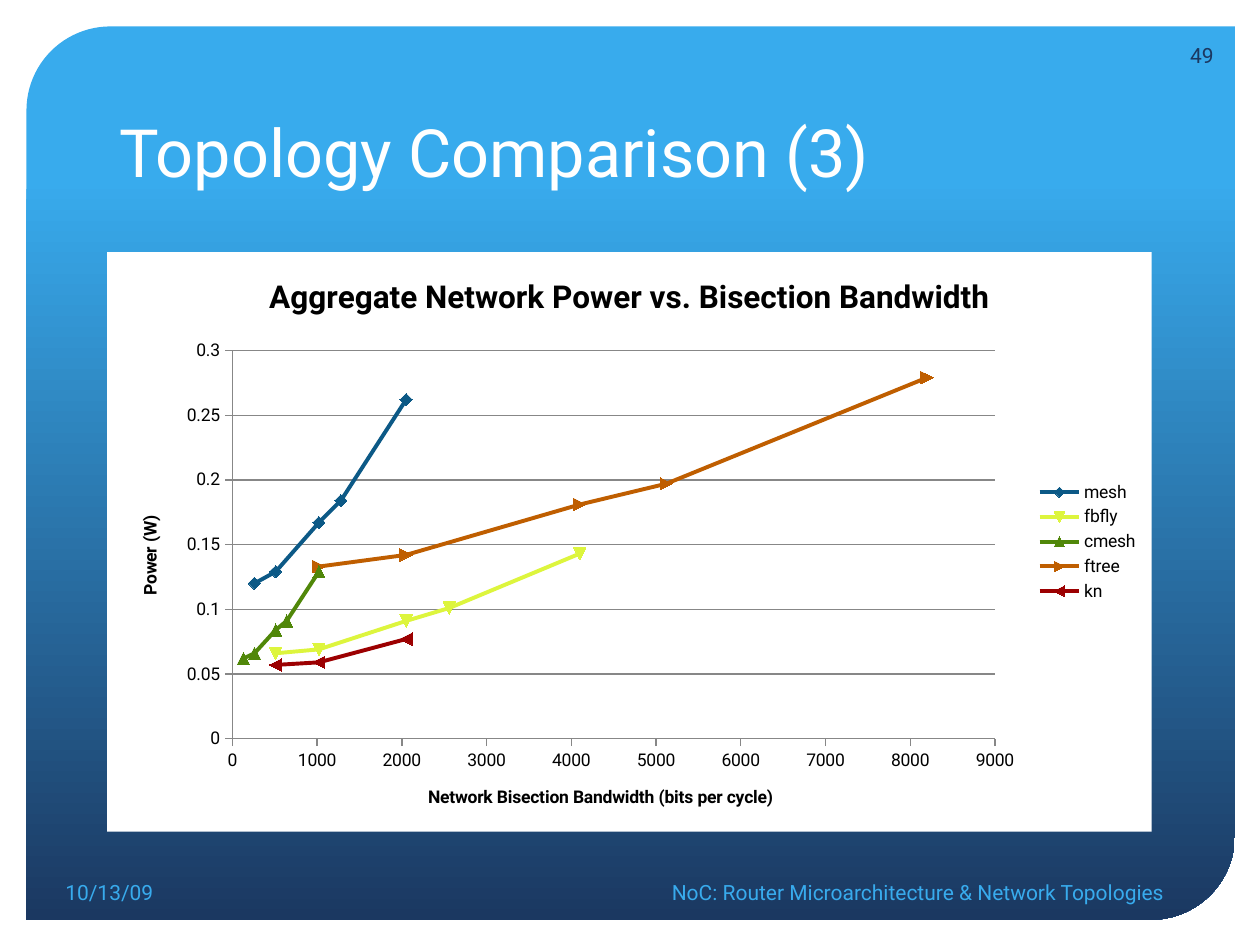
from lxml import etree
from pptx import Presentation
from pptx import util as u
from pptx.chart import data as chart_data
from pptx.dml.color import RGBColor
from pptx.enum import chart as ch, shapes, text
from pptx.oxml import parse_xml
from pptx.oxml.ns import nsdecls

COLORS = {"sky": "38ABED", "navy": "1B3861", "white": "FFFFFF", "black": "000000",
          "grid": "878787", "mesh": "0C5986", "fbfly": "DDF53D", "cmesh": "508709",
          "ftree": "BF5E00", "kn": "9C0001"}
SERIES = {
    "mesh": [(260, 0.12), (510, 0.129), (1020, 0.167), (1280, 0.184), (2050, 0.262)],
    "fbfly": [(510, 0.066), (1020, 0.069), (2050, 0.091), (2560, 0.101), (4100, 0.143)],
    "cmesh": [(130, 0.062), (260, 0.066), (510, 0.084), (640, 0.091), (1020, 0.129)],
    "ftree": [(1020, 0.133), (2050, 0.142), (4100, 0.181), (5120, 0.197), (8200, 0.279)],
    "kn": [(510, 0.057), (1020, 0.059), (2050, 0.077)],
}
FONT = "Roboto"


def rgb(name):
    """Return the named colour."""
    return RGBColor.from_string(COLORS[name])


def style_font(font, size, color, bold=False):
    """Apply the slide's typeface to a font."""
    values = {"name": FONT, "size": u.Pt(size), "bold": bold}
    for key, value in values.items():
        setattr(font, key, value)
    font.color.rgb = rgb(color)


def add_background(s, box):
    """Place the gradient panel with two rounded corners."""
    sp = s.shapes.add_shape(shapes.MSO_SHAPE.ROUND_2_DIAG_RECTANGLE, *map(u.Inches, box))
    sp.shadow.inherit = False
    sp.adjustments[0], sp.adjustments[1] = 0.094, 0
    sp.line.fill.background()
    sp.fill.gradient()
    sp.fill.gradient_angle = 270
    for stop, position, color in zip(sp.fill.gradient_stops, (0.17, 1), ("sky", "navy")):
        stop.position = position
        stop.color.rgb = rgb(color)


def add_label(s, box, words, size, color, align="LEFT", anchor="MIDDLE"):
    """Place one line of text in a box."""
    tf = s.shapes.add_textbox(*map(u.Inches, box)).text_frame
    tf.word_wrap = True
    tf.vertical_anchor = getattr(text.MSO_ANCHOR, anchor)
    p = tf.paragraphs[0]
    p.alignment = getattr(text.PP_ALIGN, align)
    r = p.add_run()
    r.text = words
    style_font(r.font, size, color)


def set_title(owner, words, size):
    """Give a chart or an axis a bold title."""
    r = getattr(owner, "chart_title" if hasattr(owner, "chart_title") else "axis_title")
    r = r.text_frame.paragraphs[0].add_run()
    r.text = words
    style_font(r.font, size, "black", True)


def style_axis(axis, title, top, step, number_format, grid):
    """Set the scale, title and lines of an axis."""
    values = {"minimum_scale": 0, "maximum_scale": top, "major_unit": step,
              "has_major_gridlines": grid, "major_tick_mark": ch.XL_TICK_MARK.OUTSIDE}
    for key, value in values.items():
        setattr(axis, key, value)
    axis.tick_labels.number_format = number_format
    axis.tick_labels.number_format_is_linked = False
    lines = [axis.format.line] + ([axis.major_gridlines.format.line] if grid else [])
    for line in lines:
        line.color.rgb = rgb("grid")
        line.width = u.Pt(0.75)
    set_title(axis, title, 10)


def set_plot_layout(chart, box):
    """Fix the inner plot area as fractions of the chart."""
    area = chart.plots[0]._element.getparent()
    for old in area.findall("{*}layout"):
        area.remove(old)
    layout = parse_xml(f'<c:layout {nsdecls("c")}><c:manualLayout/></c:layout>')
    values = [("layoutTarget", "inner"), ("xMode", "edge"), ("yMode", "edge")]
    for tag, value in values + list(zip("xywh", box)):
        etree.SubElement(layout[0], f"{{{layout.nsmap['c']}}}{tag}").set("val", str(value))
    area.insert(0, layout)


def add_power_chart(s, box):
    """Place the scatter chart of power against bandwidth."""
    data = chart_data.XyChartData()
    for name, points in SERIES.items():
        series = data.add_series(name)
        for x, y in points:
            series.add_data_point(x, y)
    chart = s.shapes.add_chart(ch.XL_CHART_TYPE.XY_SCATTER_LINES, *map(u.Inches, box), data).chart
    style_font(chart.font, 10, "black")
    chart._chartSpace.chart.addnext(parse_xml(
        f'<c:spPr {nsdecls("c", "a")}><a:solidFill><a:srgbClr val="{COLORS["white"]}"/>'
        '</a:solidFill><a:ln><a:noFill/></a:ln></c:spPr>'))
    chart.has_title = True
    set_title(chart, "Aggregate Network Power vs. Bisection Bandwidth", 18)
    chart.has_legend = True
    chart.legend.position = ch.XL_LEGEND_POSITION.RIGHT
    chart.legend.include_in_layout = False
    style_axis(chart.category_axis, "Network Bisection Bandwidth (bits per cycle)",
               9000, 1000, "0", False)
    style_axis(chart.value_axis, "Power (W)", 0.3, 0.05, "General", True)
    set_plot_layout(chart, (0.12, 0.17, 0.73, 0.67))
    plot = chart.plots[0]
    plot.vary_by_categories = False
    for series in plot.series:
        series.smooth = False
        series.format.line.width = u.Pt(2.25)
        series.format.line.color.rgb = rgb(series.name)
        series.marker.size = 7
        series.marker.format.fill.solid()
        series.marker.format.fill.fore_color.rgb = rgb(series.name)
        series.marker.format.line.color.rgb = rgb(series.name)


def main():
    """Build the slide and save it."""
    prs = Presentation()
    prs.slide_width, prs.slide_height = u.Inches(10), u.Inches(7.5)
    s = prs.slides.add_slide(prs.slide_layouts[6])
    add_background(s, (0.21, 0.21, 9.59, 7.09))
    add_label(s, (0.85, 0.42, 8.29, 1.14), "Topology Comparison (3)", 38, "white", anchor="BOTTOM")
    add_power_chart(s, (0.85, 2, 8.29, 4.6))
    add_label(s, (0.42, 6.88, 2.06, 0.4), "10/13/09", 12, "sky")
    add_label(s, (9.19, 0.24, 0.54, 0.4), "49", 12, "navy", "RIGHT")
    add_label(s, (3.61, 6.88, 5.73, 0.4), "NoC: Router Microarchitecture & Network Topologies",
              12, "sky", "RIGHT")
    prs.save("out.pptx")


if __name__ == "__main__":
    main()
